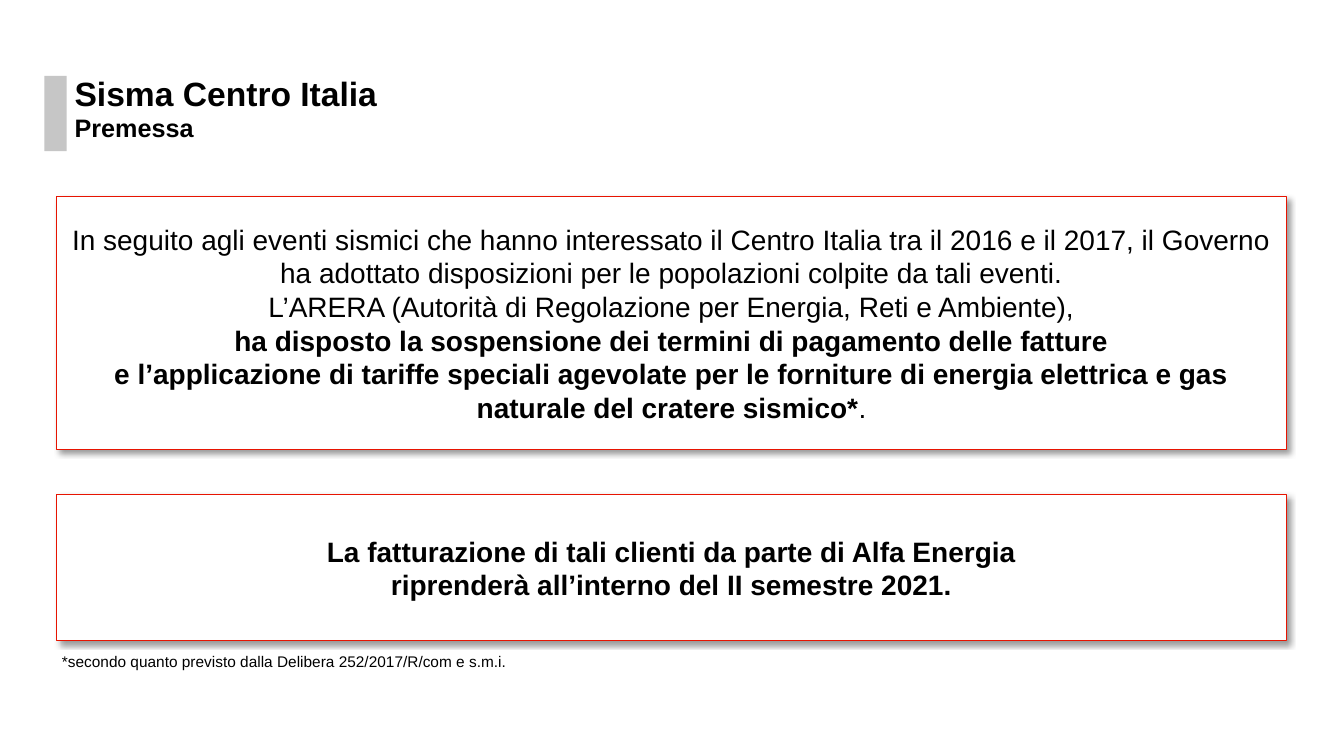
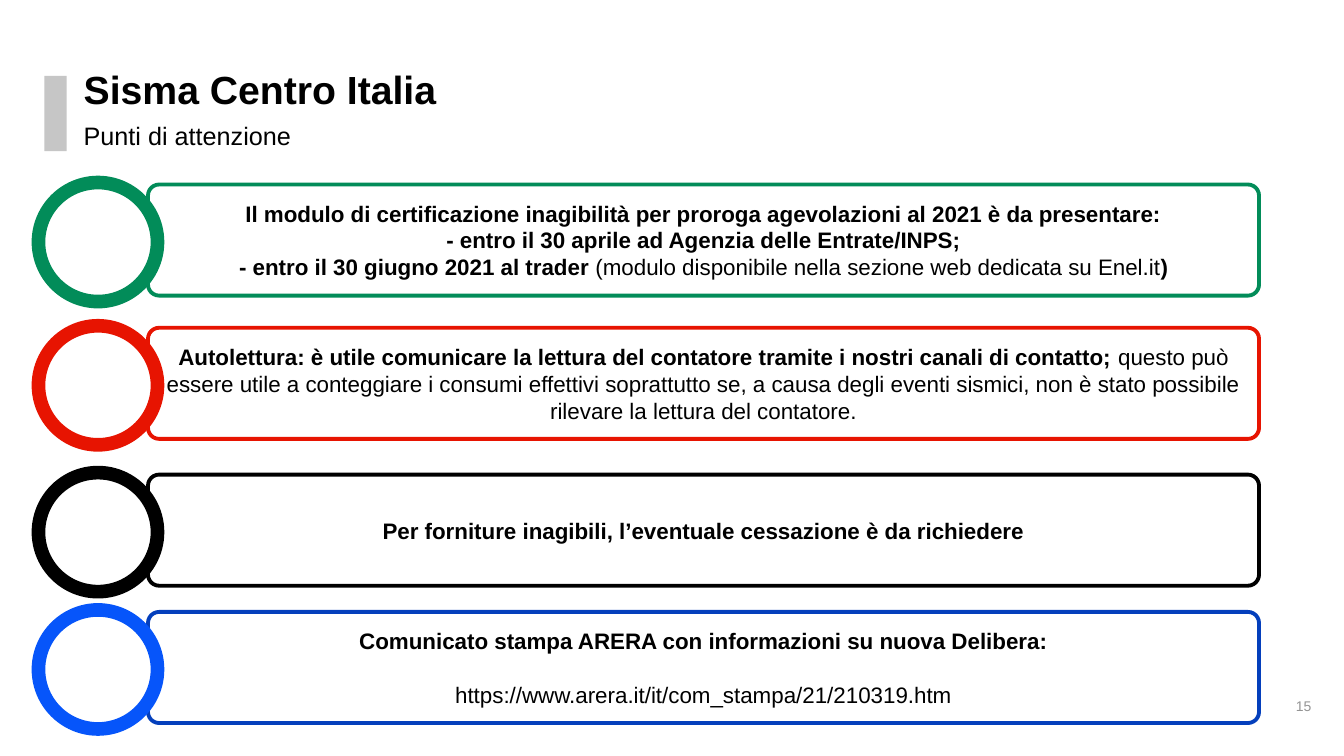
from lxml import etree
from pptx import Presentation
from pptx.dml.color import RGBColor
from pptx.enum import shapes, text
from pptx.oxml import ns
from pptx.util import Cm, Pt

BLACK, WHITE, GREY, SOFT_GREY = "000000", "FFFFFF", "C6C6C6", "949494"
GREEN, RED, BLUE, DARK_BLUE = "028C59", "E71401", "0655FA", "043FBC"
LEFT, CENTER, RIGHT = text.PP_ALIGN.LEFT, text.PP_ALIGN.CENTER, text.PP_ALIGN.RIGHT
TOP, MIDDLE = text.MSO_ANCHOR.TOP, text.MSO_ANCHOR.MIDDLE
SHAPE = shapes.MSO_SHAPE
color = RGBColor.from_string


def write(box, paragraphs, size, align=LEFT, anchor=TOP, margins=(0, 0), ink=BLACK, spacing=1.0):
    """Each paragraph is a list of (words, bold) runs."""
    frame = box.text_frame
    frame.word_wrap = True
    frame.auto_size = text.MSO_AUTO_SIZE.NONE
    frame.vertical_anchor = anchor
    frame.margin_left = frame.margin_right = Cm(margins[0])
    frame.margin_top = frame.margin_bottom = Cm(margins[1])
    for index, runs in enumerate(paragraphs):
        para = frame.add_paragraph() if index else frame.paragraphs[0]
        para.alignment = align
        para.line_spacing = spacing
        for words, bold in runs:
            span = para.add_run()
            span.text = words
            span.font.name, span.font.size, span.font.bold = "Arial", Pt(size), bold
            span.font.color.rgb = color(ink)
    return frame


def add_shape(page, kind, place, fill=None, line=None, width=0):
    shape = page.shapes.add_shape(kind, *[Cm(length) for length in place])
    shape.shadow.inherit = False
    if fill:
        shape.fill.solid()
        shape.fill.fore_color.rgb = color(fill)
    else:
        shape.fill.background()
    if line:
        shape.line.color.rgb = color(line)
        shape.line.width = Pt(width)
    else:
        shape.line.fill.background()
    return shape


deck = Presentation()
deck.slide_width, deck.slide_height = Cm(33.87), Cm(19.05)
layout = deck.slide_layouts[5]

# Headings: title left, top, size; subtitle top, bold, line spacing
headings = [
    (1.88, 1.96, 24, "Premessa", 2.92, True, 0.9),
    (2.11, 1.78, 28, "Punti di attenzione", 3.02, False, 1.0),
]
pages = []
for left, top, size, subtitle, subtitle_top, bold, spacing in headings:
    page = deck.slides.add_slide(layout)
    title = page.shapes.title
    title.left, title.top, title.width, title.height = Cm(left), Cm(top), Cm(9.9), Cm(1.1)
    write(title, [[("Sisma Centro Italia", True)]], size, spacing=0.9)
    box = page.shapes.add_textbox(Cm(left), Cm(subtitle_top), Cm(8.9), Cm(0.8))
    write(box, [[(subtitle, bold)]], 18, spacing=spacing)
    pages.append(page)
premise, attention = pages

# Grey bar beside the title, shared through the layout
bar = add_shape(premise, SHAPE.RECTANGLE, (1.12, 1.91, 0.56, 1.9), GREY)
layout.shapes.element.append(bar.element)

# Premise: two shadowed boxes and a footnote
statements = [
    (4.95, 6.38, [
        [("In seguito agli eventi sismici che hanno interessato il Centro Italia tra il 2016 e il 2017, "
          "il Governo ha adottato disposizioni per le popolazioni colpite da tali eventi.", False)],
        [("L’ARERA (Autorità di Regolazione per Energia, Reti e Ambiente),", False)],
        [("ha disposto la sospensione dei termini di pagamento delle fatture", True)],
        [("e l’applicazione di tariffe speciali agevolate per le forniture di energia elettrica e gas "
          "naturale del cratere sismico*", True), (".", False)],
    ]),
    (12.47, 3.68, [
        [("La fatturazione di tali clienti da parte di Alfa Energia", True)],
        [("riprenderà all’interno del II semestre 2021.", True)],
    ]),
]
for top, height, paragraphs in statements:
    box = add_shape(premise, SHAPE.RECTANGLE, (1.42, top, 31.01, height), WHITE, RED, 0.75)
    effects = box.element.spPr.find(ns.qn("a:effectLst"))
    shadow = etree.SubElement(effects, ns.qn("a:outerShdw"), blurRad=str(Pt(4)), dist=str(Pt(3)),
                              dir="2700000", algn="tl", rotWithShape="0")
    tint = etree.SubElement(shadow, ns.qn("a:srgbClr"), val=BLACK)
    etree.SubElement(tint, ns.qn("a:alpha"), val="40000")
    write(box, paragraphs, 20, CENTER, MIDDLE, (0.2, 0.2))

footnote = premise.shapes.add_textbox(Cm(1.56), Cm(16.43), Cm(16), Cm(0.8))
write(footnote, [[("*secondo quanto previsto dalla Delibera 252/2017/R/com e s.m.i.", False)]], 11)

# Points of attention: a framed text with a ring on its left
points = [
    (4.65, GREEN, GREEN, [
        [("Il modulo di certificazione inagibilità per proroga agevolazioni al 2021 è da presentare:", True)],
        [("- entro il 30 aprile ad Agenzia delle Entrate/INPS;", True)],
        [("- entro il 30 giugno 2021 al trader ", True),
         ("(modulo disponibile nella sezione web dedicata su Enel.it", False), (")", True)],
    ]),
    (8.26, RED, RED, [
        [("Autolettura: è utile comunicare la lettura del contatore tramite i nostri canali di contatto; ", True),
         ("questo può essere utile a conteggiare i consumi effettivi soprattutto se, a causa degli eventi "
          "sismici, non è stato possibile rilevare la lettura del contatore.", False)],
    ]),
    (11.96, BLACK, BLACK, [
        [("Per forniture inagibili, l’eventuale cessazione è da richiedere", True)],
    ]),
    (15.42, DARK_BLUE, BLUE, [
        [("Comunicato stampa ARERA con informazioni su nuova Delibera:", True)],
        [("https://www.arera.it/it/com_stampa/21/210319.htm", False)],
    ]),
]
for top, frame_color, ring_color, paragraphs in points:
    box = add_shape(attention, SHAPE.ROUNDED_RECTANGLE, (3.73, top, 28, 2.8), None, frame_color, 2.75)
    box.adjustments[0] = 0.1
    frame = write(box, paragraphs, 16, CENTER, MIDDLE, (0, 0.1))
    add_shape(attention, SHAPE.OVAL, (0.97, top - 0.05, 3, 3), WHITE, ring_color, 9.75)
frame.paragraphs[-1].space_before = Pt(19)  # sets the web address apart

# Page number
number = attention.shapes.add_textbox(Cm(30.68), Cm(17.6), Cm(2.1), Cm(0.43))
write(number, [[("15", False)]], 10, RIGHT, MIDDLE, ink=SOFT_GREY, spacing=0.9)
number.left = Cm(30.95)

deck.save("out.pptx")
